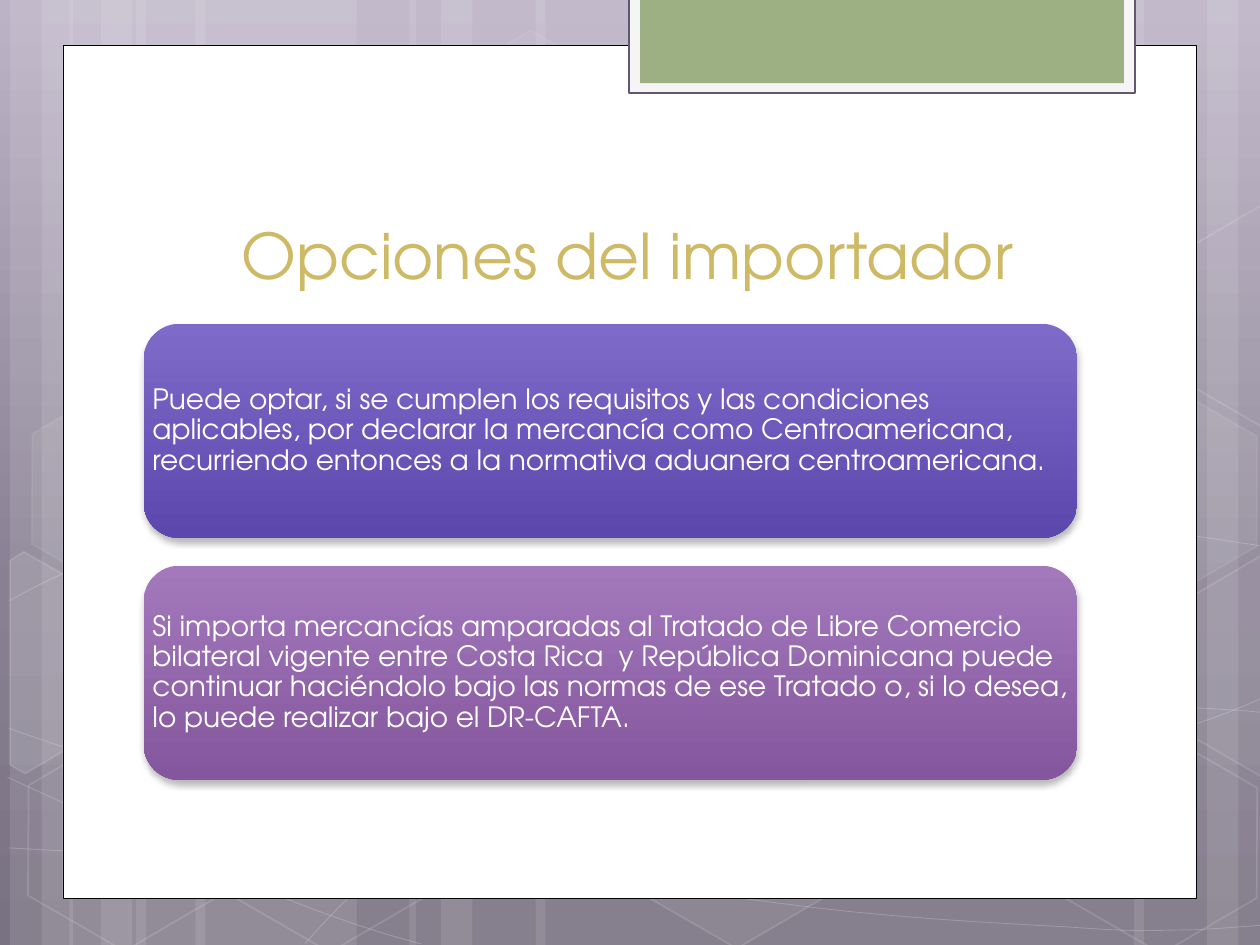
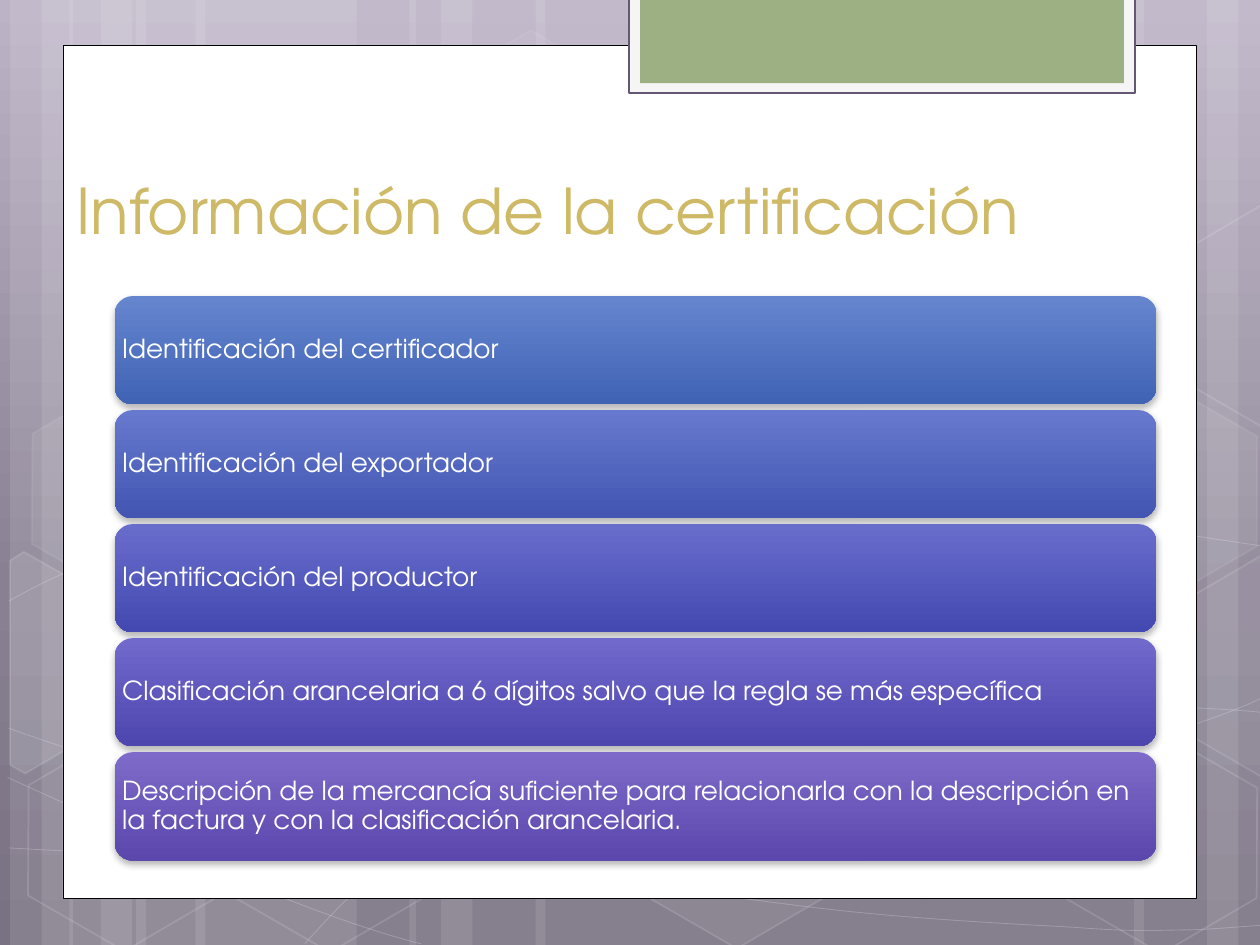
"""Build two slides on importer options and certification details, over a shared hexagon backdrop."""
import copy
import dataclasses
import typing

import lxml.etree
import pptx
import pptx.dml.color
import pptx.dml.fill
import pptx.enum.shapes
import pptx.enum.text
import pptx.oxml.ns
import pptx.shapes.autoshape
import pptx.shapes.shapetree
import pptx.slide
import pptx.text.text
import pptx.util

Inches = pptx.util.Inches
Pt = pptx.util.Pt
qn = pptx.oxml.ns.qn
Preset = pptx.enum.shapes.MSO_SHAPE
Anchor = pptx.enum.text.MSO_ANCHOR
Shape = pptx.shapes.autoshape.Shape
Point = tuple[float, float]
Stops = tuple[tuple[float, str], ...]


@dataclasses.dataclass(frozen=True)
class Theme:
    font: str = "TeX Gyre Adventor"
    title_size: float = 36
    title: str = "CEB966"
    white: str = "FFFFFF"
    black: str = "000000"
    tab_frame: str = "F5F5F5"
    tab_edge: str = "645773"
    tab: str = "9CB084"
    backdrop: Stops = ((0, "BCB3C6"), (0.62, "898193"), (1, "797282"))
    blue: Stops = ((0, "6585CF"), (1, "4163B4"))
    cobalt: Stops = ((0, "6679CE"), (1, "4256B2"))
    indigo: Stops = ((0, "686DCC"), (1, "4449B1"))
    violet: Stops = ((0, "7169CB"), (1, "4E46AF"))
    purple: Stops = ((0, "7E6BC9"), (1, "5C47AD"))
    orchid: Stops = ((0, "A379BB"), (1, "84569E"))


THEME = Theme()


class Box(typing.NamedTuple):
    left: float
    top: float
    width: float
    height: float

    def emu(self) -> list[int]:
        return [Inches(length) for length in self]


class Paint(typing.NamedTuple):
    fill: str | None = None
    fill_alpha: int = 100
    line: str | None = None
    line_width: float = 1
    line_alpha: int = 100


class Hexagon(typing.NamedTuple):
    left: float
    top: float
    fill_alpha: int
    line_alpha: int


class Panel(typing.NamedTuple):
    box: Box
    paint: Paint


class Card(typing.NamedTuple):
    text: str
    stops: Stops


@dataclasses.dataclass(frozen=True)
class CardSlide:
    title: str
    title_left: float
    title_top: float
    first_card: Box
    last_top: float
    inset: float
    text_size: float
    cards: list[Card]


STRIPES = [(1.08, 1.75), (0.08, 0.5), (0.33, 0.83), (1.55, 1.75), (0.55, 0.5), (0.8, 0.83),
           (7.33, 1.75), (9.58, 0.5), (9, 0.83), (4.25, 3.08), (3.25, 0.5), (3.5, 0.83)]

CURVES: list[list[Point]] = [
    [(0.07, 6.73), (0.61, 6.76), (1.15, 6.79), (1.9, 6.78), (2.65, 6.77), (3.58, 6.75),
     (4.58, 6.65), (5.58, 6.55), (7, 6.36), (7.92, 6.17), (8.83, 5.98), (9.77, 5.68), (10.07, 5.51)],
    [(0.07, 4.77), (0.36, 4.61), (0.65, 4.46), (1.21, 4.31), (1.78, 4.16), (2.59, 3.94),
     (3.47, 3.87), (4.36, 3.8), (5.44, 3.79), (6.54, 3.87), (7.64, 3.95), (9.47, 4.26), (10.07, 4.34)],
    [(0.06, 6.17), (1.27, 6.72), (2.47, 7.27), (3.34, 7.49)],
    [(0.07, 5.78), (0.38, 5.89), (0.7, 6), (1.28, 6.16), (1.86, 6.31), (2.73, 6.56),
     (3.57, 6.73), (4.4, 6.9), (5.45, 7.08), (6.28, 7.18), (7.11, 7.29), (8, 7.33),
     (8.53, 7.36), (9.05, 7.4), (9.19, 7.38), (9.45, 7.38), (9.71, 7.37), (9.89, 7.35), (10.07, 7.34)],
    [(2.42, 7.49), (2.6, 7.29), (2.78, 7.09), (3.02, 6.91), (3.26, 6.73), (3.6, 6.53),
     (3.88, 6.39), (4.16, 6.25), (4.33, 6.19), (4.7, 6.09), (5.06, 5.99), (5.73, 5.85),
     (6.08, 5.78), (6.44, 5.71), (6.49, 5.71), (6.8, 5.69), (7.11, 5.66), (7.6, 5.63),
     (7.94, 5.62), (8.29, 5.61), (8.86, 5.62), (8.86, 5.62), (8.86, 5.62), (9.53, 5.62),
     (9.53, 5.62), (9.71, 5.63), (9.88, 5.64), (9.97, 5.65), (10.06, 5.66), (10.03, 5.65), (10.06, 5.66)],
]

HEXAGONS = [
    Hexagon(3.34, 0.36, 4, 8), Hexagon(4.97, 5.89, 6, 12), Hexagon(0.11, 5.91, 0, 12),
    Hexagon(0.14, 3.12, 7, 8), Hexagon(1.74, 5.92, 0, 12), Hexagon(7.53, 4.53, 10, 12),
    Hexagon(8.34, 5.93, 0, 12), Hexagon(8.34, 3.14, 7, 8),
]

CUT_HEXAGONS: list[tuple[int, list[Point]]] = [
    (10, [(0.08, 4.45), (0.19, 4.38), (0.96, 4.82), (0.95, 5.7), (0.2, 6.14), (0.08, 6.07)]),
    (4, [(9.26, 4.85), (10.01, 4.41), (10.09, 4.46), (10.09, 6.13), (10.02, 6.17), (9.26, 5.73)]),
    (0, [(9.26, 2.07), (10.01, 1.63), (10.1, 1.68), (10.09, 3.35), (10.02, 3.39), (9.26, 2.95)]),
]

PANELS = [
    Panel(Box(0.5, 0.36, 9, 6.77), Paint(THEME.white, line=THEME.black, line_width=0.5)),
    Panel(Box(4.99, -0.02, 4.02, 0.76), Paint(THEME.tab_frame, line=THEME.tab_edge, line_width=1.25)),
    Panel(Box(5.08, -0.02, 3.84, 0.68), Paint(THEME.tab)),
]

SLIDES = [
    CardSlide("Opciones del importador", 1.14, 1.12, Box(1.14, 2.57, 7.41, 1.7), 4.49, 0.07, 16, [
        Card("Puede optar, si se cumplen los requisitos y las condiciones aplicables, por declarar la "
             "mercancía como Centroamericana, recurriendo entonces a la normativa aduanera "
             "centroamericana.", THEME.purple),
        Card("Si importa mercancías amparadas al Tratado de Libre Comercio bilateral vigente entre "
             "Costa Rica  y República Dominicana puede continuar haciéndolo bajo las normas de ese "
             "Tratado o, si lo desea, lo puede realizar bajo el DR-CAFTA.", THEME.orchid),
    ]),
    CardSlide("Información de la certificación", 0.51, 0.76, Box(0.91, 2.35, 8.27, 0.86), 5.97, 0.06, 15, [
        Card("Identificación del certificador", THEME.blue),
        Card("Identificación del exportador", THEME.cobalt),
        Card("Identificación del productor", THEME.indigo),
        Card("Clasificación arancelaria a 6 dígitos salvo que la regla se más específica", THEME.violet),
        Card("Descripción de la mercancía suficiente para relacionarla con la descripción en la "
             "factura y con la clasificación arancelaria.", THEME.purple),
    ]),
]


def rgb(code: str) -> pptx.dml.color.RGBColor:
    return pptx.dml.color.RGBColor.from_string(code)


def add_alpha(color: lxml.etree.ElementBase, percent: int) -> None:
    lxml.etree.SubElement(color, qn("a:alpha"), val=str(percent * 1000))


def paint_shape(shape: Shape, paint: Paint) -> None:
    shape.shadow.inherit = False
    properties = shape.element.spPr
    if paint.fill and paint.fill_alpha:
        shape.fill.solid()
        shape.fill.fore_color.rgb = rgb(paint.fill)
        if paint.fill_alpha < 100:
            add_alpha(properties.find(qn("a:solidFill"))[0], paint.fill_alpha)
    else:
        shape.fill.background()
    if paint.line:
        shape.line.color.rgb = rgb(paint.line)
        shape.line.width = Pt(paint.line_width)
        if paint.line_alpha < 100:
            add_alpha(properties.find(qn("a:ln")).find(qn("a:solidFill"))[0], paint.line_alpha)
    else:
        shape.line.fill.background()


def apply_gradient(fill: pptx.dml.fill.FillFormat, owner: lxml.etree.ElementBase, stops: Stops) -> None:
    fill.gradient()
    fill.gradient_angle = 270
    stop_list = next(owner.iter(qn("a:gsLst")))
    while len(stop_list) < len(stops):
        stop_list.append(copy.deepcopy(stop_list[0]))
    for stop, (position, color) in zip(fill.gradient_stops, stops):
        stop.position = position
        stop.color.rgb = rgb(color)


def add_soft_shadow(shape: Shape) -> None:
    shape.shadow.inherit = False
    shadow = lxml.etree.SubElement(
        shape.element.spPr.find(qn("a:effectLst")), qn("a:outerShdw"),
        blurRad=str(Pt(4)), dist=str(Pt(2)), dir=str(90 * 60000), rotWithShape="0")
    add_alpha(lxml.etree.SubElement(shadow, qn("a:srgbClr"), val=THEME.black), 28)


def add_outline(shapes: pptx.shapes.shapetree.GroupShapes, points: list[Point],
                closed: bool, paint: Paint) -> Shape:
    start, *rest = [(Inches(x), Inches(y)) for x, y in points]
    builder = shapes.build_freeform(*start)
    builder.add_line_segments(rest, close=closed)
    outline = builder.convert_to_shape()
    paint_shape(outline, paint)
    return outline


def bend_segments(outline: Shape) -> None:
    segments = list(outline.element.iter(qn("a:lnTo")))
    for controls in zip(segments[::3], segments[1::3], segments[2::3]):
        bend = lxml.etree.Element(qn("a:cubicBezTo"))
        controls[0].addprevious(bend)
        for control in controls:
            bend.append(control[0])
            control.getparent().remove(control)


def build_backdrop(layout: pptx.slide.SlideLayout, slide: pptx.slide.Slide) -> None:
    apply_gradient(layout.background.fill, layout.element, THEME.backdrop)
    for placeholder in list(layout.placeholders):
        if placeholder.placeholder_format.type != pptx.enum.shapes.PP_PLACEHOLDER.TITLE:
            layout.shapes.element.remove(placeholder.element)
    group = slide.shapes.add_group_shape()
    shapes = group.shapes
    for left, width in STRIPES:
        stripe = shapes.add_shape(Preset.RECTANGLE, *Box(left, 0, width, 7.5).emu())
        paint_shape(stripe, Paint(THEME.white, 10))
    for curve in CURVES:
        bend_segments(add_outline(shapes, curve, False,
                                  Paint(line=THEME.white, line_width=0.5, line_alpha=20)))
    for left, top, fill_alpha, line_alpha in HEXAGONS:
        hexagon = shapes.add_shape(Preset.HEXAGON, *Box(left, top, 1.75, 1.52).emu())
        hexagon.adjustments[0] = 0.285
        hexagon.rotation = 30
        paint_shape(hexagon, Paint(THEME.white, fill_alpha, THEME.white, 1, line_alpha))
    for fill_alpha, corners in CUT_HEXAGONS:
        add_outline(shapes, corners, True, Paint(THEME.white, fill_alpha, THEME.white, 1, 12))
    for panel in PANELS:
        paint_shape(shapes.add_shape(Preset.RECTANGLE, *panel.box.emu()), panel.paint)
    layout.shapes.element.insert(2, group.element)


def write_text(frame: pptx.text.text.TextFrame, text: str, size: float, color: str) -> None:
    frame.text = text
    frame.word_wrap = True
    frame.auto_size = pptx.enum.text.MSO_AUTO_SIZE.NONE
    font = frame.paragraphs[0].runs[0].font
    font.name = THEME.font
    font.size = Pt(size)
    font.color.rgb = rgb(color)


def add_card(slide: pptx.slide.Slide, box: Box, card: Card, content: CardSlide) -> None:
    plate = slide.shapes.add_shape(Preset.ROUNDED_RECTANGLE, *box.emu())
    apply_gradient(plate.fill, plate.element, card.stops)
    plate.line.fill.background()
    add_soft_shadow(plate)
    frame = slide.shapes.add_textbox(*box.emu()).text_frame
    write_text(frame, card.text, content.text_size, THEME.white)
    frame.vertical_anchor = Anchor.MIDDLE
    frame.margin_left = frame.margin_right = Inches(content.inset)
    frame.margin_top = frame.margin_bottom = Inches(content.inset)
    frame.paragraphs[0].line_spacing = 0.9


def fill_slide(slide: pptx.slide.Slide, content: CardSlide) -> None:
    title = slide.shapes.title
    title.left, title.top, title.width, title.height = Box(
        content.title_left, content.title_top, 7.68, 1.25).emu()
    frame = title.text_frame
    write_text(frame, content.title, THEME.title_size, THEME.title)
    frame.vertical_anchor = Anchor.BOTTOM
    frame.margin_left = frame.margin_right = Inches(0.05)
    frame.paragraphs[0].alignment = pptx.enum.text.PP_ALIGN.CENTER
    first = content.first_card
    pitch = (content.last_top - first.top) / (len(content.cards) - 1)
    for row, card in enumerate(content.cards):
        add_card(slide, first._replace(top=first.top + row * pitch), card, content)


def main() -> None:
    deck = pptx.Presentation()
    deck.slide_width, deck.slide_height = Inches(10), Inches(7.5)
    layout = deck.slide_layouts[5]
    slides = [deck.slides.add_slide(layout) for _ in SLIDES]
    build_backdrop(layout, slides[0])
    for slide, content in zip(slides, SLIDES):
        fill_slide(slide, content)
    deck.save("out.pptx")


if __name__ == "__main__":
    main()
